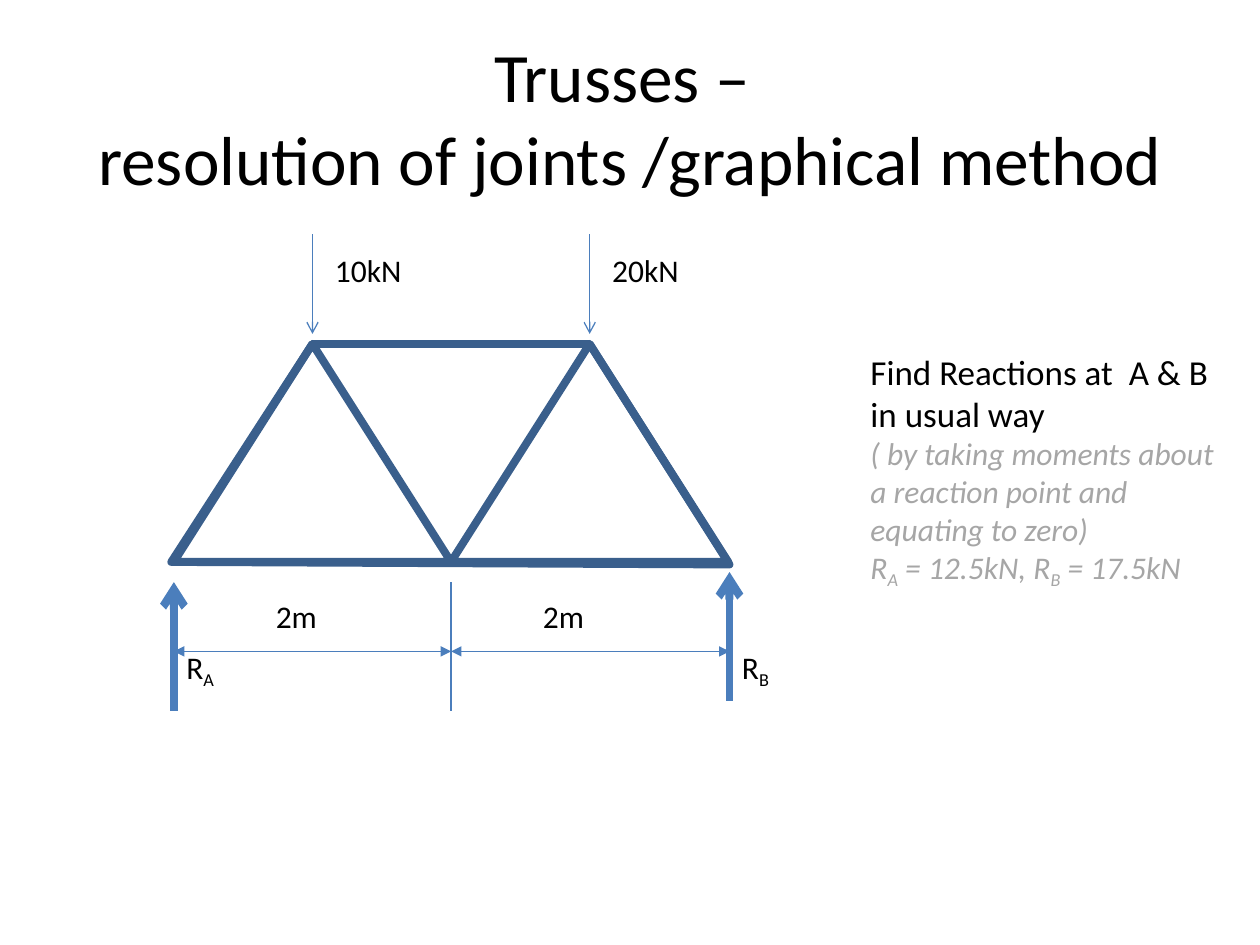
from dataclasses import dataclass

from lxml.etree import SubElement
from pptx import Presentation
from pptx.dml.color import RGBColor
from pptx.enum.shapes import MSO_CONNECTOR as Connector, MSO_SHAPE as Preset
from pptx.enum.text import MSO_ANCHOR as Anchor, MSO_AUTO_SIZE as AutoSize, PP_ALIGN as Align
from pptx.oxml.ns import qn
from pptx.util import Inches, Pt


@dataclass(frozen=True)
class Theme:
    font: str = "Calibri"
    text: RGBColor = RGBColor(0x00, 0x00, 0x00)
    muted: RGBColor = RGBColor(0xA6, 0xA6, 0xA6)
    member: RGBColor = RGBColor(0x3A, 0x5F, 0x8C)
    arrow: RGBColor = RGBColor(0x4B, 0x7E, 0xBC)
    title_size: float = 39.6
    lead_size: float = 20
    body_size: float = 18
    thick: float = 4.5
    thin: float = 0.75


class SlideBuilder:
    def __init__(self, slide, theme):
        self.slide = slide
        self.theme = theme

    def style_run(self, span, size, color=None, italic=None):
        span.font.name = self.theme.font
        span.font.size = Pt(size)
        span.font.color.rgb = color or self.theme.text
        span.font.italic = italic

    def title(self, text, left, top, width, height):
        box = self.slide.shapes.title
        box.left, box.top, box.width, box.height = map(Inches, (left, top, width, height))
        frame = box.text_frame
        frame.auto_size = AutoSize.NONE
        frame.vertical_anchor = Anchor.MIDDLE
        para = frame.paragraphs[0]
        para.text = text
        para.alignment = Align.CENTER
        for span in para.runs:
            self.style_run(span, self.theme.title_size)

    def outline(self, shape):
        shape.shadow.inherit = False
        shape.fill.background()
        shape.line.color.rgb = self.theme.member
        shape.line.width = Pt(self.theme.thick)

    def triangle(self, left, top, width, height):
        bounds = map(Inches, (left, top, width, height))
        self.outline(self.slide.shapes.add_shape(Preset.ISOSCELES_TRIANGLE, *bounds))

    def polygon(self, points):
        corners = [(Inches(x), Inches(y)) for x, y in points]
        builder = self.slide.shapes.build_freeform(*corners[0])
        builder.add_line_segments(corners[1:], close=True)
        self.outline(builder.convert_to_shape())

    def line(self, start, end, weight, head=None, tail=None):
        """Draw a line; head is the arrowhead at start, tail the one at end."""
        line = self.slide.shapes.add_connector(Connector.STRAIGHT, *map(Inches, (*start, *end)))
        line.line.color.rgb = self.theme.arrow
        line.line.width = Pt(weight)
        properties = line.line._get_or_add_ln()
        for tag, kind in (("a:headEnd", head), ("a:tailEnd", tail)):
            if kind:
                SubElement(properties, qn(tag), type=kind)
        SubElement(line._element.spPr, qn("a:effectLst"))

    def text(self, paragraphs, left, top, width, height):
        """Each paragraph is (text, size, color, italic); "_" lowers the next letter."""
        box = self.slide.shapes.add_textbox(*map(Inches, (left, top, width, height)))
        frame = box.text_frame
        frame.word_wrap = True
        frame.auto_size = AutoSize.SHAPE_TO_FIT_TEXT
        for index, (text, *style) in enumerate(paragraphs):
            para = frame.add_paragraph() if index else frame.paragraphs[0]
            first, *rest = text.split("_")
            pieces = [(first, False)]
            for part in rest:
                pieces += [(part[0], True), (part[1:], False)]
            for piece, lowered in pieces:
                if piece:
                    span = para.add_run()
                    span.text = piece
                    self.style_run(span, *style)
                    if lowered:
                        span.font._element.set("baseline", "-25000")

    def label(self, text, left, top):
        self.text([(text, self.theme.body_size)], left, top, 0.79, 0.4)


def main():
    deck = Presentation()
    deck.slide_width, deck.slide_height = Inches(10), Inches(7.5)
    theme = Theme()
    page = SlideBuilder(deck.slides.add_slide(deck.slide_layouts[5]), theme)
    page.title("Trusses – \vresolution of joints /graphical method", 0.5, 0.3, 9, 1.25)

    bay, top, bottom = 2.2, 2.73, 4.46
    support_a = 1.38
    middle = support_a + bay
    support_b = 5.79
    apexes = (2.48, 4.68)

    for left in (support_a, middle):
        page.triangle(left, top, bay, bottom - top)
    page.polygon([(1.36, bottom), (apexes[0], top), (apexes[1], top), (support_b, 4.48)])

    for x, load, label_left in zip(apexes, ("10kN", "20kN"), (2.56, 4.76)):
        page.line((x, 1.86), (x, 2.65), theme.thin, tail="arrow")
        page.label(load, label_left, 1.94)

    for x, foot, name in ((support_a, 5.64, "R_A"), (support_b, 5.56, "R_B")):
        page.line((x, foot), (x, foot - 1.02), theme.thick, tail="arrow")
        page.label(name, x, 5.09)

    for start, end, label_left in ((support_a, middle, 2.09), (middle, support_b, 4.21)):
        page.line((start, 5.17), (end, 5.17), theme.thin, "triangle", "triangle")
        page.label("2m", label_left, 4.69)
    page.line((middle, 4.62), (middle, 5.64), theme.thin)

    muted = (theme.body_size, theme.muted, True)
    page.text([
        ("Find Reactions at  A & B in usual way", theme.lead_size),
        ("( by taking moments about a reaction point and equating to zero)", *muted),
        ("R_A = 12.5kN, R_B = 17.5kN", *muted),
    ], 6.81, 2.73, 2.99, 1.99)

    deck.save("out.pptx")


if __name__ == "__main__":
    main()
